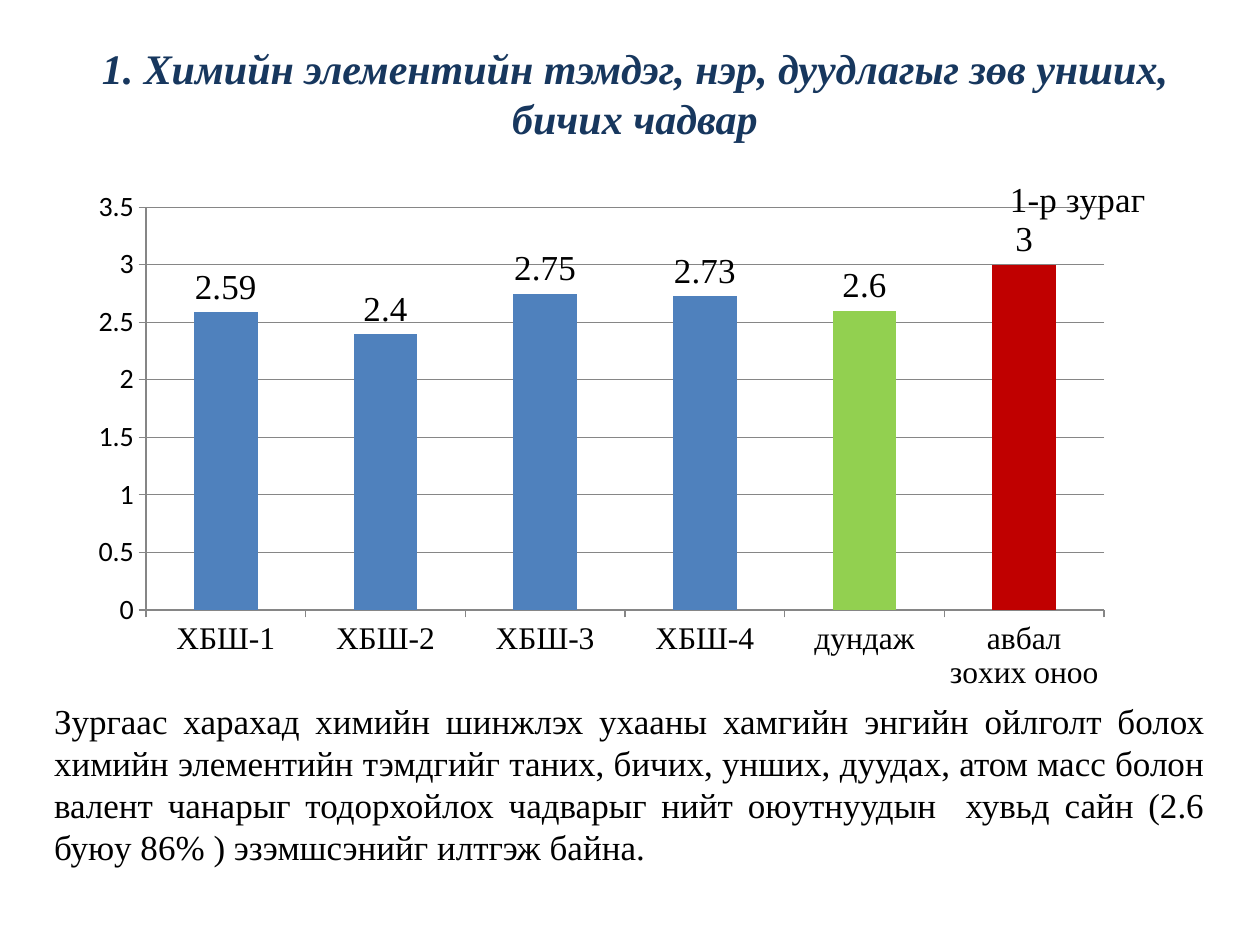
from pptx import Presentation
from pptx.chart.data import CategoryChartData
from pptx.dml.color import RGBColor
from pptx.enum.chart import XL_CHART_TYPE, XL_LABEL_POSITION, XL_TICK_MARK
from pptx.enum.text import MSO_ANCHOR, PP_ALIGN
from pptx.oxml import parse_xml
from pptx.oxml.ns import nsdecls, qn
from pptx.util import Cm, Pt

COLUMNS = XL_CHART_TYPE.COLUMN_CLUSTERED
ABOVE = XL_LABEL_POSITION.OUTSIDE_END
TICK_OUT = XL_TICK_MARK.OUTSIDE
TOP, MIDDLE = MSO_ANCHOR.TOP, MSO_ANCHOR.MIDDLE
CENTER, JUSTIFY = PP_ALIGN.CENTER, PP_ALIGN.JUSTIFY

SERIF, SANS = "Times New Roman", "Calibri"
BLACK, NAVY, GRAY = "000000", "17375E", "868686"
BLUE, GREEN, RED = "4F81BD", "92D050", "C00000"

HEADING = "1. Химийн элементийн тэмдэг, нэр, дуудлагыг зөв унших, бичих чадвар"
CAPTION = "1-р зураг"
SCORES = {"ХБШ-1": 2.59, "ХБШ-2": 2.4, "ХБШ-3": 2.75, "ХБШ-4": 2.73,
          "дундаж": 2.6, "авбал зохих оноо": 3}
HIGHLIGHTS = {4: GREEN, 5: RED}
CONCLUSION = (
    "Зургаас харахад химийн шинжлэх ухааны хамгийн энгийн ойлголт болох "
    "химийн элементийн тэмдгийг таних, бичих, унших, дуудах, атом масс болон "
    "валент чанарыг тодорхойлох чадварыг нийт оюутнуудын  хувьд сайн (2.6 "
    "буюу 86% ) эзэмшсэнийг илтгэж байна.")


def rgb(value):
    return RGBColor.from_string(value)


def set_font(font, size, name=SERIF, color=BLACK, bold=False, italic=False):
    font.size, font.name = Pt(size), name
    font.bold, font.italic = bold, italic
    font.color.rgb = rgb(color)


def fill_solid(fmt, color):
    fmt.fill.solid()
    fmt.fill.fore_color.rgb = rgb(color)


def add_text(s, box, text, align, anchor, **font):
    tf = s.shapes.add_textbox(*map(Cm, box)).text_frame
    tf.word_wrap = True
    tf.vertical_anchor = anchor
    p = tf.paragraphs[0]
    p.alignment = align
    r = p.add_run()
    r.text = text
    set_font(r.font, **font)


def set_layout(parent, after=None, **values):
    """Give a chart part a manual layout, in fractions of the chart."""
    for old in parent.findall(qn("c:layout")):
        parent.remove(old)
    parts = "".join(f'<c:{k} val="{v}"/>' for k, v in values.items())
    layout = parse_xml(f'<c:layout {nsdecls("c")}><c:manualLayout>{parts}'
                       "</c:manualLayout></c:layout>")
    if after is None:
        parent.insert(0, layout)
    else:
        parent.find(qn(after)).addnext(layout)


def style_axis(axis, size, name):
    axis.major_tick_mark = TICK_OUT
    axis.format.line.color.rgb = rgb(GRAY)
    set_font(axis.tick_labels.font, size, name)


def add_caption(chart):
    chart.has_title = True
    title = chart.chart_title
    r = title.text_frame.paragraphs[0].add_run()
    r.text = CAPTION
    set_font(r.font, 20)
    set_layout(title._element, "c:tx", xMode="edge", yMode="edge",
               x=0.85, y=0.04)


def add_score_chart(s, box):
    data = CategoryChartData()
    data.categories = list(SCORES)
    data.add_series("Series 1", list(SCORES.values()))
    chart = s.shapes.add_chart(COLUMNS, *map(Cm, box), data).chart
    set_font(chart.font, 10, SANS)
    chart.has_legend = False
    add_caption(chart)
    set_layout(chart._chartSpace.chart.plotArea, layoutTarget="inner",
               xMode="edge", yMode="edge", x=0.057, y=0.104, w=0.886, h=0.698)

    style_axis(chart.category_axis, 18, SERIF)
    axis = chart.value_axis
    style_axis(axis, 16, SANS)
    axis.minimum_scale, axis.maximum_scale, axis.major_unit = 0, 3.5, 0.5
    axis.major_gridlines.format.line.color.rgb = rgb(GRAY)

    plot = chart.plots[0]
    plot.gap_width = 150
    plot.vary_by_categories = False
    series = plot.series[0]
    fill_solid(series.format, BLUE)
    for i, color in HIGHLIGHTS.items():
        fill_solid(series.points[i].format, color)
    labels = series.data_labels
    labels.show_value = True
    labels.position = ABOVE
    set_font(labels.font, 20)


def main():
    prs = Presentation()
    prs.slide_width, prs.slide_height = Cm(25.4), Cm(19.05)
    s = prs.slides.add_slide(prs.slide_layouts[6])
    add_text(s, (1.27, 0.76, 23.06, 2.21), HEADING, CENTER, MIDDLE,
             size=24, color=NAVY, bold=True, italic=True)
    add_score_chart(s, (1.7, 2.97, 21.8, 11.63))
    add_text(s, (0.84, 13.97, 23.7, 4.52), CONCLUSION, JUSTIFY, TOP, size=20)
    prs.save("out.pptx")


if __name__ == "__main__":
    main()
